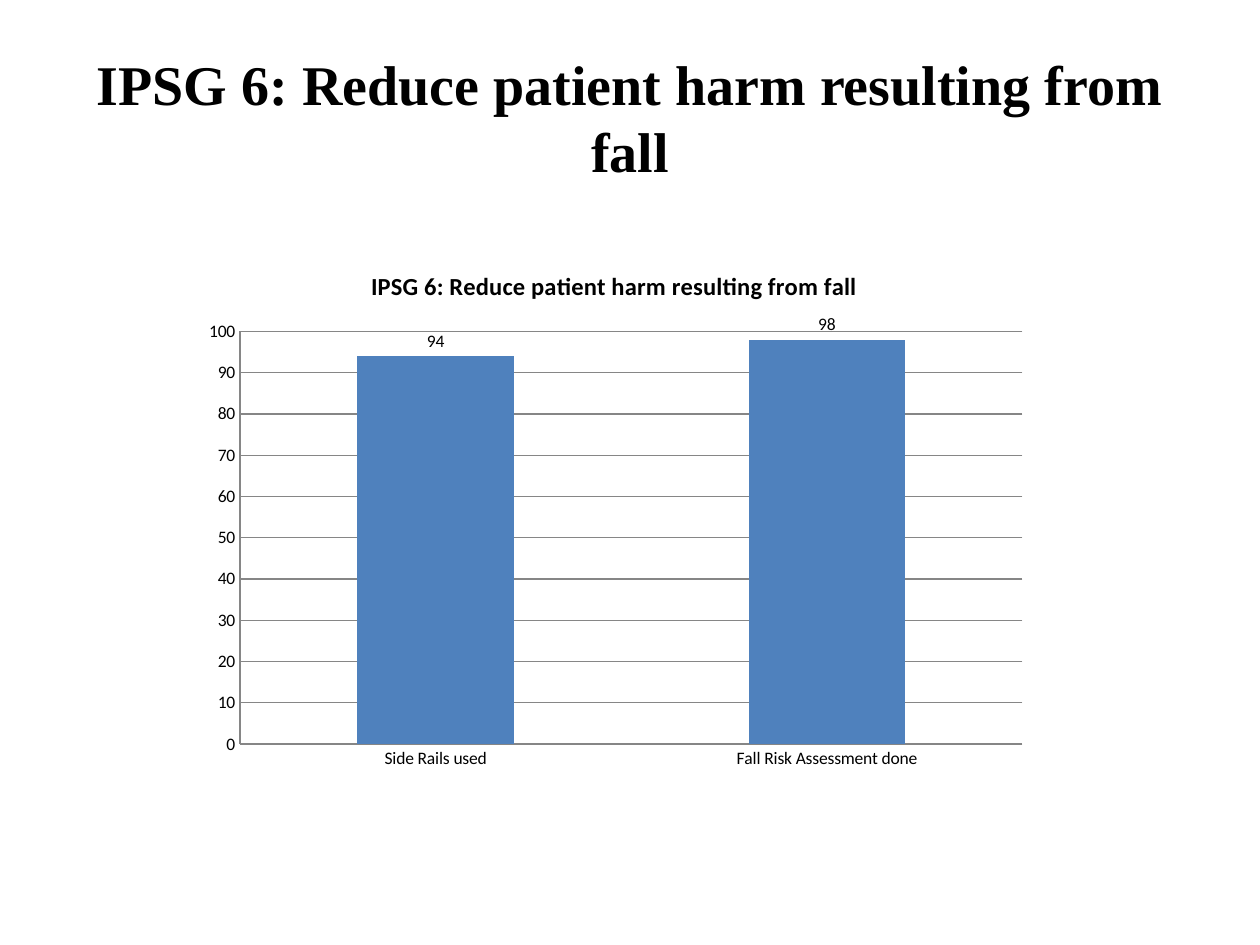
from lxml.etree import SubElement
from pptx import Presentation
from pptx.chart.data import CategoryChartData
from pptx.dml.color import RGBColor
from pptx.enum.chart import XL_CHART_TYPE, XL_LABEL_POSITION, XL_TICK_MARK
from pptx.enum.text import MSO_ANCHOR, PP_ALIGN
from pptx.oxml.ns import qn
from pptx.util import Pt

COLORS = {"text": "000000", "bar": "4F81BD", "grid": "868686"}
HEAD = "IPSG 6: Reduce patient harm resulting from fall"
RATES = {"Side Rails used": 94, "Fall Risk Assessment done": 98}


def color(name):
    return RGBColor.from_string(COLORS[name])


def style(font, size, face, bold=False):
    font.size, font.name, font.bold = Pt(size), face, bold
    font.color.rgb = color("text")


def add_title(slide, left, top, width, height):
    title = slide.shapes.title
    title.left, title.top = Pt(left), Pt(top)
    title.width, title.height = Pt(width), Pt(height)
    frame = title.text_frame
    frame.text = HEAD
    frame.word_wrap = True
    frame.vertical_anchor = MSO_ANCHOR.MIDDLE
    para = frame.paragraphs[0]
    para.alignment = PP_ALIGN.CENTER
    style(para.runs[0].font, 32, "Times New Roman", True)


def set_plot(chart, **box):
    """Fix the inner plot area, in fractions of the chart."""
    area = chart._chartSpace.chart.plotArea
    for old in area.findall(qn("c:layout")):
        area.remove(old)
    layout = SubElement(area, qn("c:layout"))
    area.insert(0, layout)
    manual = SubElement(layout, qn("c:manualLayout"))
    parts = {"layoutTarget": "inner", "xMode": "edge", "yMode": "edge", **box}
    for tag, val in parts.items():
        SubElement(manual, qn(f"c:{tag}")).set("val", str(val))


def add_rates(slide, left, top, width, height):
    data = CategoryChartData(number_format="0")
    data.categories = list(RATES)
    data.add_series("Series 1", list(RATES.values()))
    chart = slide.shapes.add_chart(
        XL_CHART_TYPE.COLUMN_CLUSTERED,
        Pt(left), Pt(top), Pt(width), Pt(height), data).chart
    style(chart.font, 10, "Calibri")
    chart.has_legend = False
    chart.has_title = True
    frame = chart.chart_title.text_frame
    frame.text = HEAD
    style(frame.paragraphs[0].runs[0].font, 14, "Calibri", True)
    set_plot(chart, x=0.06, y=0.16, w=0.92, h=0.78)

    for axis in (chart.category_axis, chart.value_axis):
        axis.major_tick_mark = axis.minor_tick_mark = XL_TICK_MARK.NONE
        axis.format.line.color.rgb = color("grid")
    scale = chart.value_axis
    scale.minimum_scale, scale.maximum_scale = 0, 100
    scale.major_unit = 10
    scale.has_major_gridlines = True
    scale.major_gridlines.format.line.color.rgb = color("grid")
    scale.tick_labels.number_format = "0"
    scale.tick_labels.number_format_is_linked = False

    plot = chart.plots[0]
    plot.gap_width = 150
    plot.vary_by_categories = False
    fill = plot.series[0].format.fill
    fill.solid()
    fill.fore_color.rgb = color("bar")
    labels = plot.series[0].data_labels
    labels.show_value = True
    labels.number_format = "0"
    labels.number_format_is_linked = False
    labels.position = XL_LABEL_POSITION.OUTSIDE_END


def main():
    deck = Presentation()
    deck.slide_width, deck.slide_height = Pt(720), Pt(540)
    slide = deck.slides.add_slide(deck.slide_layouts[5])
    add_title(slide, 36, 21.6, 648, 90)
    add_rates(slide, 108, 141, 486, 302.4)
    deck.save("out.pptx")


if __name__ == "__main__":
    main()
